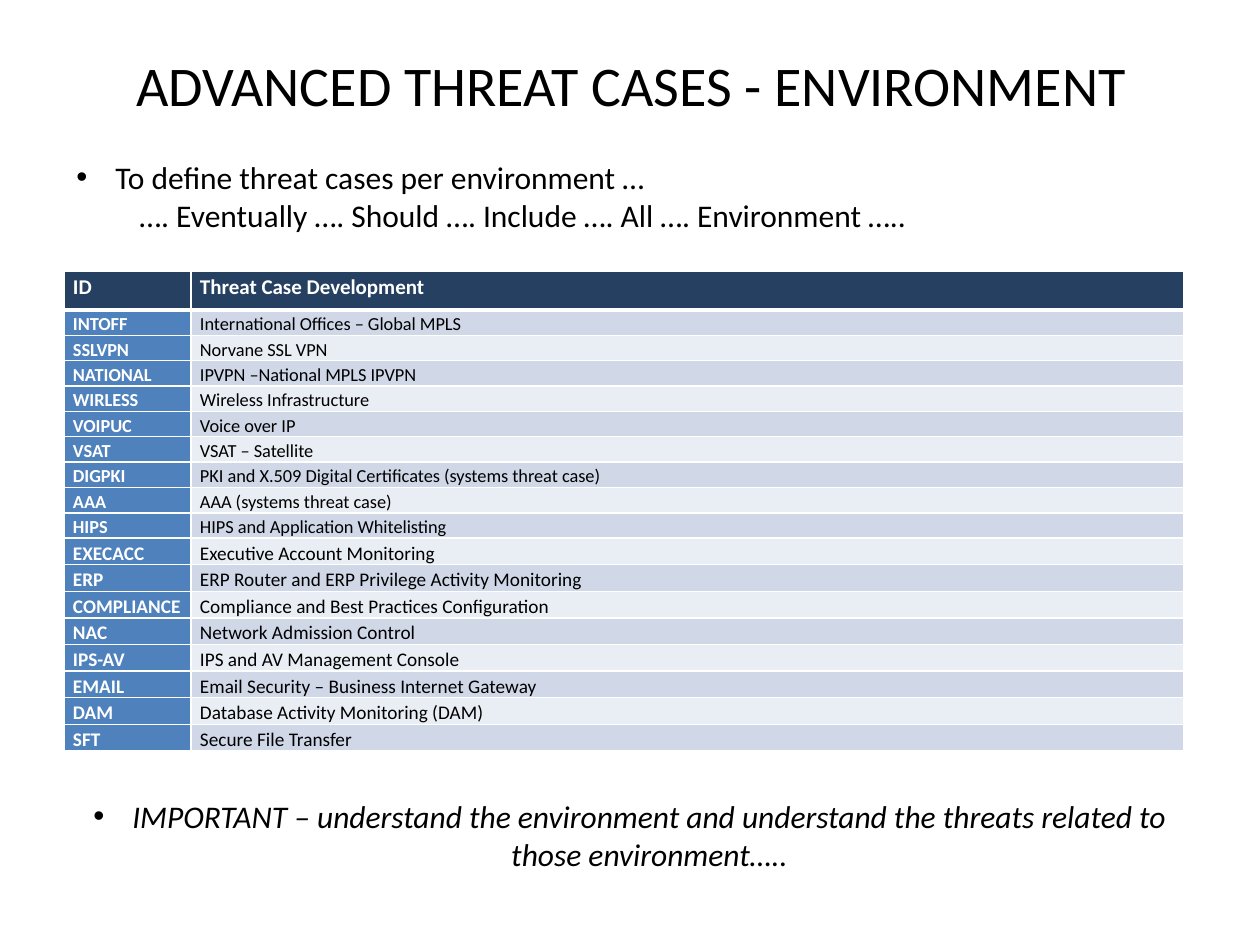
import pptx
import pptx.util
import pptx.dml.color
import pptx.enum.text
import pptx.oxml
import pptx.oxml.ns

PX = 914400 // 126
COLORS = {"text": "000000", "white": "FFFFFF", "header": "254061",
          "id": "4F81BD", "odd": "D0D8E8", "even": "E9EDF4"}
ALIGN = pptx.enum.text.PP_ALIGN
NAMESPACE = pptx.oxml.ns.nsdecls("a")

THREAT_CASES = [
    ("INTOFF", "International Offices – Global MPLS"),
    ("SSLVPN", "Norvane SSL VPN"),
    ("NATIONAL", "IPVPN –National MPLS IPVPN"),
    ("WIRLESS", "Wireless Infrastructure"),
    ("VOIPUC", "Voice over IP"),
    ("VSAT", "VSAT – Satellite"),
    ("DIGPKI", "PKI and X.509 Digital Certificates (systems threat case)"),
    ("AAA", "AAA (systems threat case)"),
    ("HIPS", "HIPS and Application Whitelisting"),
    ("EXECACC", "Executive Account Monitoring"),
    ("ERP", "ERP Router and ERP Privilege Activity Monitoring"),
    ("COMPLIANCE", "Compliance and Best Practices Configuration"),
    ("NAC", "Network Admission Control"),
    ("IPS-AV", "IPS and AV Management Console"),
    ("EMAIL", "Email Security – Business Internet Gateway"),
    ("DAM", "Database Activity Monitoring (DAM)"),
    ("SFT", "Secure File Transfer"),
]


def set_font(para, size, color="text", bold=False, italic=False):
    font = para.font
    font.name = "Calibri"
    font.size = pptx.util.Pt(size)
    font.bold = bold
    font.italic = italic
    font.color.rgb = pptx.dml.color.RGBColor.from_string(COLORS[color])


def add_bullet(para):
    properties = para._p.get_or_add_pPr()
    properties.set("marL", str(39 * PX))
    properties.set("indent", str(-39 * PX))
    for tag in ('buFont %s typeface="Arial"', 'buChar %s char="•"'):
        properties.append(pptx.oxml.parse_xml(f"<a:{tag % NAMESPACE}/>"))


deck = pptx.Presentation()
deck.slide_width = 1260 * PX
deck.slide_height = 945 * PX
page = deck.slides.add_slide(deck.slide_layouts[5])

# Title
title = page.shapes.title
title.left, title.top, title.width, title.height = 65 * PX, 40 * PX, 1133 * PX, 88 * PX
title.text_frame.text = "ADVANCED THREAT CASES - ENVIRONMENT"
title.text_frame.paragraphs[0].alignment = ALIGN.CENTER
set_font(title.text_frame.paragraphs[0], 32)

# Introduction
intro = page.shapes.add_textbox(64 * PX, 152 * PX, 1142 * PX, 127 * PX).text_frame
intro.word_wrap = True
intro.text = ("To define threat cases per environment …\n"
              "\t…. Eventually …. Should …. Include …. All …. Environment …..")
add_bullet(intro.paragraphs[0])
for para in intro.paragraphs:
    set_font(para, 18)

# Threat case table
rows = [("ID", "Threat Case Development")] + THREAT_CASES
table = page.shapes.add_table(len(rows), 2, 64 * PX, 271 * PX, 1120 * PX, 480 * PX).table
table.columns[0].width = 127 * PX
table.columns[1].width = 993 * PX
for row, texts in enumerate(rows):
    # The later rows have slightly larger text
    size, height = (12, 39) if row == 0 else (10.5, 25) if row < 10 else (11, 26)
    table.rows[row].height = height * PX
    for column, text in enumerate(texts):
        cell = table.cell(row, column)
        cell.margin_left = cell.margin_right = 9 * PX
        cell.margin_top = cell.margin_bottom = 0
        cell.text = text
        para = cell.text_frame.paragraphs[0]
        para.line_spacing = 1.15
        strong = row == 0 or column == 0
        set_font(para, size, "white" if strong else "text", bold=strong)

        # White borders, thicker under the header
        for side in "LRTB":
            thick = (row, side) in [(0, "B"), (1, "T")]
            cell._tc.get_or_add_tcPr().append(pptx.oxml.parse_xml(
                f'<a:ln{side} {NAMESPACE} w="{38100 if thick else 12700}"><a:solidFill>'
                f'<a:srgbClr val="{COLORS["white"]}"/></a:solidFill></a:ln{side}>'))
        band = "odd" if row % 2 else "even"
        fill = "header" if row == 0 else "id" if column == 0 else band
        cell.fill.solid()
        cell.fill.fore_color.rgb = pptx.dml.color.RGBColor.from_string(COLORS[fill])

# Closing remark
remark = page.shapes.add_textbox(59 * PX, 791 * PX, 1142 * PX, 127 * PX).text_frame
remark.word_wrap = True
remark.text = ("IMPORTANT – understand the environment and understand the threats "
               "related to those environment…..")
para = remark.paragraphs[0]
para.alignment = ALIGN.CENTER
add_bullet(para)
set_font(para, 18, italic=True)

deck.save("out.pptx")
